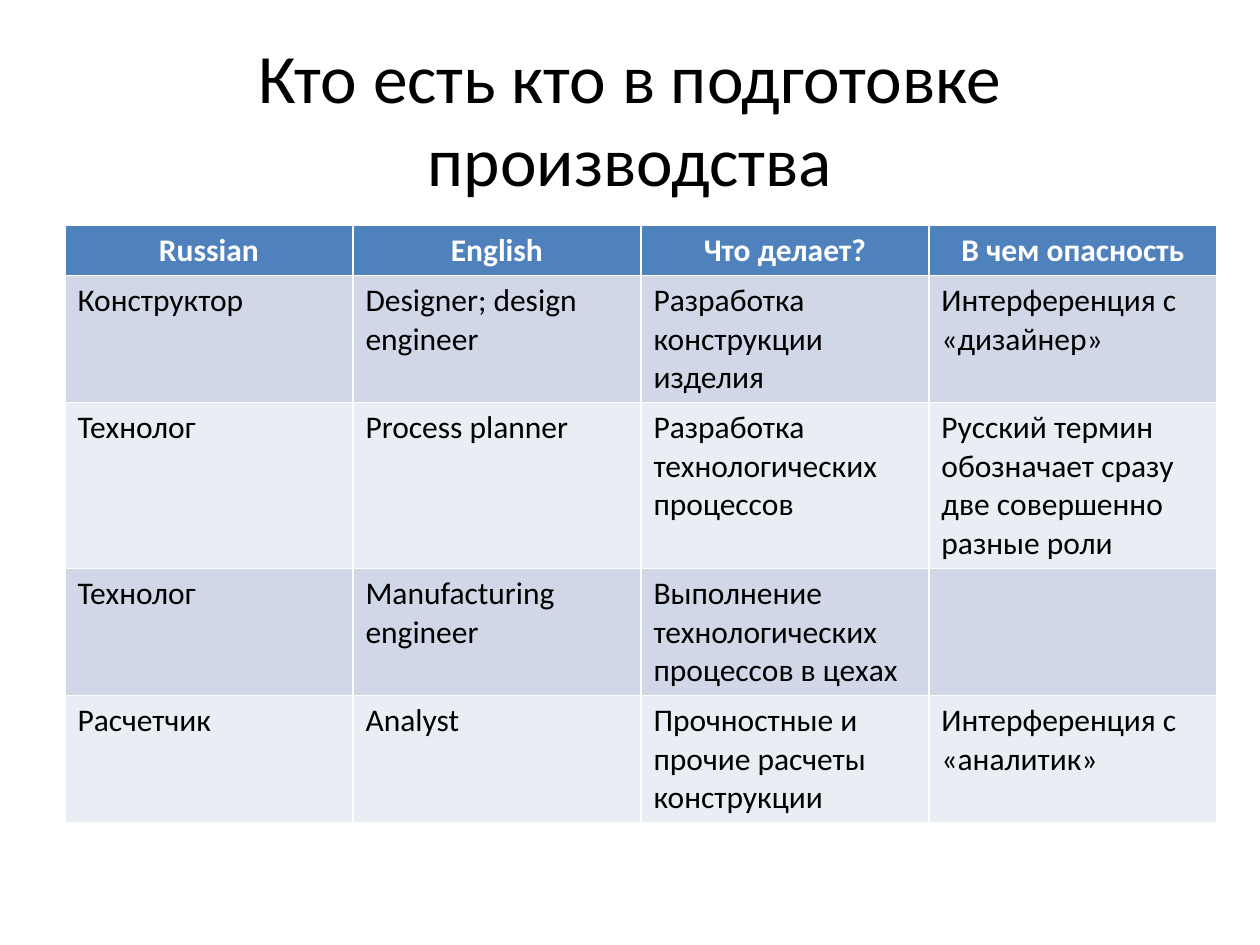
"""Build a slide with a table of production planning roles."""
import pptx
import pptx.dml.color
import pptx.enum.text
import pptx.util

RGBColor = pptx.dml.color.RGBColor
PP_ALIGN = pptx.enum.text.PP_ALIGN

TITLE = "Кто есть кто в подготовке производства"
HEADER = ("Russian", "English", "Что делает?", "В чем опасность")
ROLES = [
    ("Конструктор", "Designer; design engineer",
     "Разработка конструкции изделия", "Интерференция с «дизайнер»"),
    ("Технолог", "Process planner", "Разработка технологических процессов",
     "Русский термин обозначает сразу две совершенно разные роли"),
    ("Технолог", "Manufacturing engineer",
     "Выполнение технологических процессов в цехах", ""),
    ("Расчетчик", "Analyst", "Прочностные и прочие расчеты конструкции",
     "Интерференция с «аналитик»"),
]

FONT = "Calibri"
BLACK = RGBColor(0x00, 0x00, 0x00)
WHITE = RGBColor(0xFF, 0xFF, 0xFF)
BLUE = RGBColor(0x4F, 0x81, 0xBD)
BANDS = (RGBColor(0xD0, 0xD8, 0xE8), RGBColor(0xE9, 0xED, 0xF4))

PX = 914400 // 126
SLIDE = (1260, 945)
TITLE_BOX = (63, 38, 1134, 158)
TABLE_LEFT, TABLE_TOP = 65, 225
COL_WIDTH = 288
ROW_HEIGHTS = (50, 127, 166, 127, 127)


def px(*lengths):
    return [pptx.util.Emu(n * PX) for n in lengths]


def write(tf, text, size=18, color=BLACK, bold=False, align=PP_ALIGN.LEFT):
    p = tf.paragraphs[0]
    p.alignment = align
    p.font.size = pptx.util.Pt(size)
    if text:
        r = p.add_run()
        r.text = text
        r.font.name = FONT
        r.font.size = pptx.util.Pt(size)
        r.font.bold = bold
        r.font.color.rgb = color


def add_title(s):
    tf = s.shapes.add_textbox(*px(*TITLE_BOX)).text_frame
    tf.word_wrap = True
    tf.vertical_anchor = pptx.enum.text.MSO_ANCHOR.MIDDLE
    write(tf, TITLE, size=39.6, align=PP_ALIGN.CENTER)


def add_roles(s):
    rows = [HEADER] + ROLES
    frame = px(TABLE_LEFT, TABLE_TOP, COL_WIDTH * len(HEADER), sum(ROW_HEIGHTS))
    table = s.shapes.add_table(len(rows), len(HEADER), *frame).table
    for column in table.columns:
        column.width = px(COL_WIDTH)[0]
    for i, (texts, height) in enumerate(zip(rows, ROW_HEIGHTS)):
        table.rows[i].height = px(height)[0]
        for j, text in enumerate(texts):
            cell = table.cell(i, j)
            cell.fill.solid()
            if i == 0:
                cell.fill.fore_color.rgb = BLUE
                write(cell.text_frame, text, color=WHITE, bold=True,
                      align=PP_ALIGN.CENTER)
            else:
                cell.fill.fore_color.rgb = BANDS[(i - 1) % 2]
                write(cell.text_frame, text)


def main():
    prs = pptx.Presentation()
    prs.slide_width, prs.slide_height = px(*SLIDE)
    s = prs.slides.add_slide(prs.slide_layouts[6])
    add_title(s)
    add_roles(s)
    prs.save("out.pptx")


if __name__ == "__main__":
    main()
